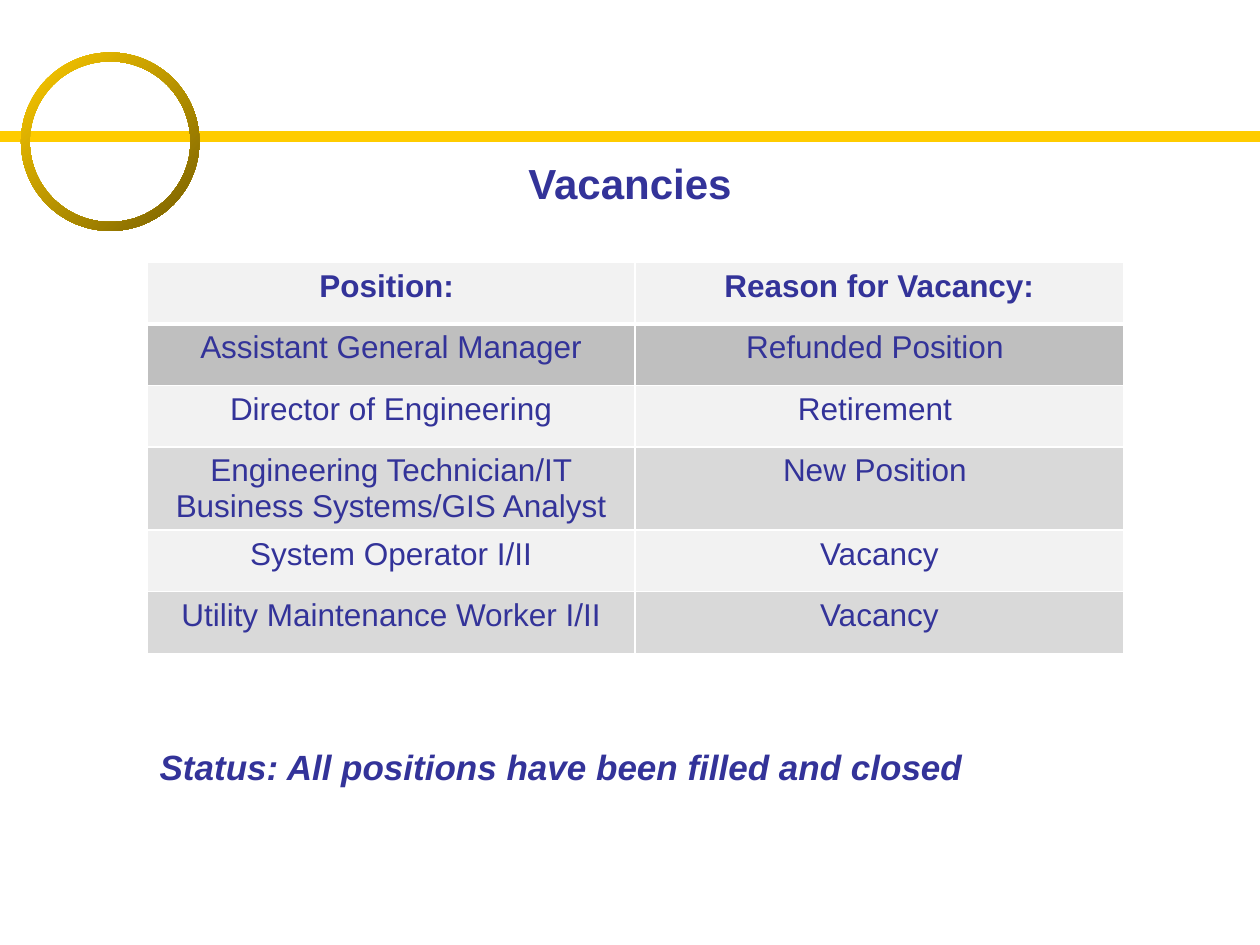
from lxml import etree
from pptx import Presentation
from pptx.dml.color import RGBColor
from pptx.enum.shapes import MSO_CONNECTOR, MSO_SHAPE
from pptx.enum.text import MSO_ANCHOR, PP_ALIGN
from pptx.oxml.ns import qn
from pptx.util import Pt

LINE, RING = MSO_CONNECTOR.STRAIGHT, MSO_SHAPE.DONUT
TOP = MSO_ANCHOR.TOP
LEFT, MID = PP_ALIGN.LEFT, PP_ALIGN.CENTER

HEX = {"gold": "FFCC00", "bronze": "765E00", "ink": "333399", "pale": "F2F2F2",
       "gray": "D9D9D9", "dark": "BFBFBF", "white": "FFFFFF"}
ROWS = [
    ("Position: ", "Reason for Vacancy:", "pale"),
    ("Assistant General Manager", "Refunded Position ", "dark"),
    ("Director of Engineering", "Retirement ", "pale"),
    ("Engineering Technician/IT Business Systems/GIS Analyst", "New Position ", "gray"),
    ("System Operator I/II", "Vacancy", "pale"),
    ("Utility Maintenance Worker I/II", "Vacancy", "gray"),
]


def rgb(name):
    return RGBColor.from_string(HEX[name])


def write(frame, text, align, **form):
    """Fill a text frame with one paragraph in the slide's font and ink."""
    frame.text = text
    para = frame.paragraphs[0]
    para.alignment = align
    font = para.runs[0].font
    for key, value in {"name": "Arial", **form}.items():
        setattr(font, key, value)
    font.color.rgb = rgb("ink")


deck = Presentation()
deck.slide_width, deck.slide_height = Pt(720), Pt(540)
slide = deck.slides.add_slide(deck.slide_layouts[1])
shapes = slide.shapes

# Gold rule and ring
rule = shapes.add_connector(LINE, Pt(0), Pt(78), Pt(720), Pt(78))
rule.line.color.rgb = rgb("gold")
rule.line.width = Pt(6)
etree.SubElement(rule._element.spPr, qn("a:effectLst"))

ring = shapes.add_shape(RING, Pt(12), Pt(30), Pt(102), Pt(102))
ring.adjustments[0] = 0.05
ring.shadow.inherit = False
ring.line.fill.background()
ring.fill.gradient()
ring.fill.gradient_angle = 315
for stop, name in zip(ring.fill.gradient_stops, ("gold", "bronze")):
    stop.color.rgb = rgb(name)

# Title and status
title, body = shapes.title, slide.placeholders[1]
for shape, box in ((title, (36, 84, 648, 48)), (body, (84, 420, 558, 62.4))):
    shape.left, shape.top, shape.width, shape.height = map(Pt, box)
    shape.text_frame.vertical_anchor = TOP
    shape.text_frame.margin_top = Pt(6)
write(title.text_frame, "Vacancies", MID, size=Pt(24), bold=True)
write(body.text_frame, "Status: All positions have been filled and closed", LEFT,
      size=Pt(20), bold=True, italic=True)
para = body.text_frame.paragraphs[0]
para.space_before = Pt(0)
props = para._p.get_or_add_pPr()
props.set("marL", "0")
props.set("indent", "0")
etree.SubElement(props, qn("a:buNone"))

# Vacancy table
frame = shapes.add_table(len(ROWS), 2, Pt(84), Pt(150), Pt(558), Pt(211))
table = frame.table
for col in table.columns:
    col.width = Pt(279)
for r, (*texts, shade) in enumerate(ROWS):
    table.rows[r].height = Pt(35.15)
    for c, text in enumerate(texts):
        cell = table.cell(r, c)
        write(cell.text_frame, text, MID, size=Pt(18), bold=r == 0)
        props = cell._tc.get_or_add_tcPr()
        wide = {"T": 3 if r == 1 else 1, "B": 3 if r == 0 else 1}
        for side in "LRTB":
            edge = etree.SubElement(props, qn("a:ln" + side), w=str(Pt(wide.get(side, 1))))
            paint = etree.SubElement(edge, qn("a:solidFill"))
            etree.SubElement(paint, qn("a:srgbClr"), val=HEX["white"])
        cell.fill.solid()
        cell.fill.fore_color.rgb = rgb(shade)

deck.save("out.pptx")
